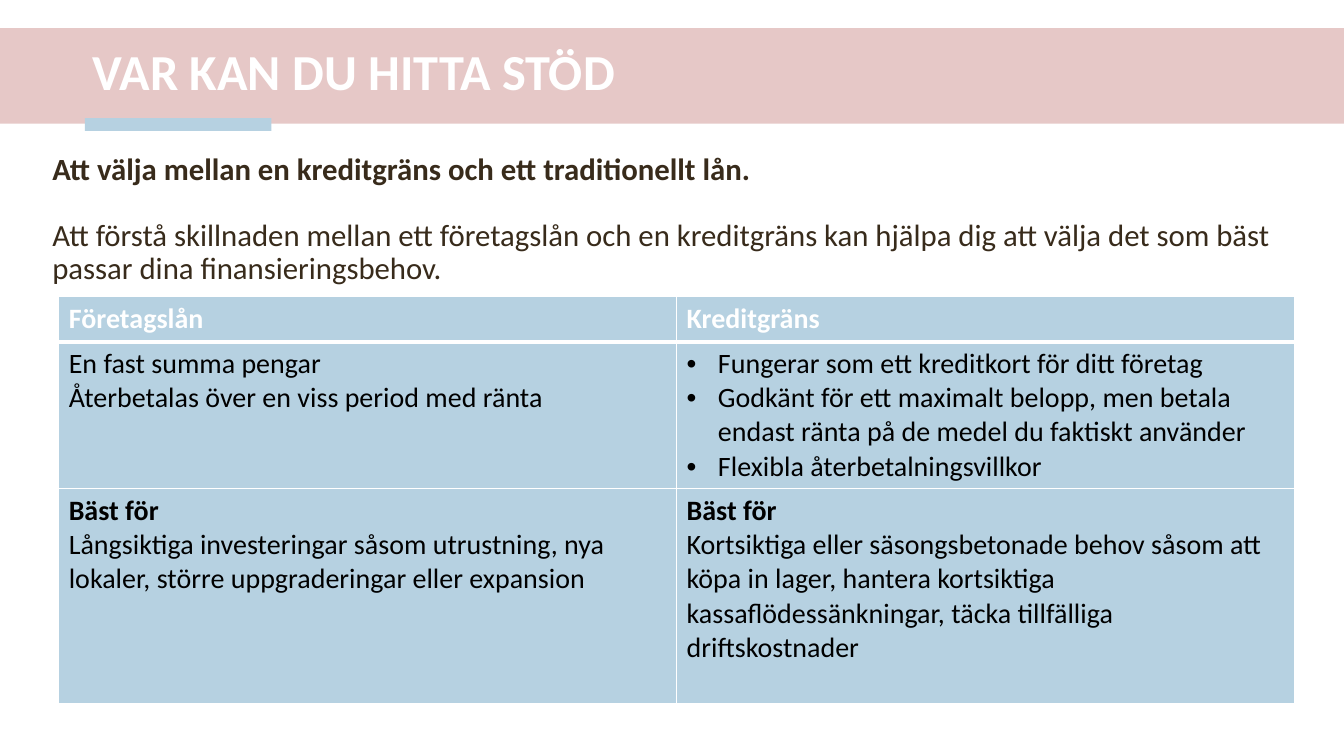
from lxml import etree
from pptx import Presentation, util as u
from pptx.dml.color import RGBColor
from pptx.enum import shapes, text
from pptx.oxml import ns

PINK, BLUE, WHITE, BROWN, BLACK = "E6C8C7", "B6D1E1", "FFFFFF", "382B1B", "000000"


def colour(value):
    return RGBColor.from_string(value)


def add_xml(parent, tag, **attributes):
    return etree.SubElement(parent, ns.qn(tag), attributes)


class SlideBuilder:
    font_name = "Calibri"

    def __init__(self, slide):
        self.slide = slide

    def style(self, paragraph, size, hue, bold=False):
        font = paragraph.font
        font.name, font.size, font.bold = self.font_name, u.Pt(size), bold
        font.color.rgb = colour(hue)

    def title(self, wording, left, top, width, height):
        heading = self.slide.shapes.title
        heading.left, heading.top = u.Cm(left), u.Cm(top)
        heading.width, heading.height = u.Cm(width), u.Cm(height)
        frame = heading.text_frame
        frame.text = wording
        frame.word_wrap = True
        frame.auto_size = text.MSO_AUTO_SIZE.NONE
        frame.vertical_anchor = text.MSO_ANCHOR.MIDDLE
        line = frame.paragraphs[0]
        line.alignment = text.PP_ALIGN.LEFT
        line.line_spacing = 0.9
        self.style(line, 36, WHITE, True)

    def bar(self, hue, left, top, width, height):
        bar = self.slide.shapes.add_shape(
            shapes.MSO_SHAPE.RECTANGLE, u.Cm(left), u.Cm(top), u.Cm(width), u.Cm(height))
        bar.shadow.inherit = False
        bar.fill.solid()
        bar.fill.fore_color.rgb = colour(hue)
        bar.line.fill.background()
        self.slide.shapes.title.element.addprevious(bar.element)

    def intro(self, lead, explanation, left, top, width, height):
        box = self.slide.shapes.add_textbox(u.Cm(left), u.Cm(top), u.Cm(width), u.Cm(height))
        frame = box.text_frame
        frame.word_wrap = True
        frame.text = f"{lead}\n{explanation}"
        for line, bold in zip(frame.paragraphs, (True, False)):
            line.line_spacing = u.Pt(23.4)
            self.style(line, 22, BROWN, bold)
        frame.paragraphs[1].space_before = u.Pt(23.4)

    def bullet(self, paragraph):
        properties = paragraph._p.get_or_add_pPr()
        indent = u.Cm(0.79)
        properties.set("marL", str(indent))
        properties.set("indent", str(-indent))
        add_xml(properties, "a:buFont", typeface="Arial")
        add_xml(properties, "a:buChar", char="•")

    def borders(self, cell, **widths):
        properties = cell._tc.get_or_add_tcPr()
        for position, side in enumerate("LRTB"):
            edge = add_xml(properties, f"a:ln{side}", w=str(u.Pt(widths.get(side, 1))))
            add_xml(add_xml(edge, "a:solidFill"), "a:srgbClr", val=WHITE)
            properties.insert(position, edge)

    def cell(self, cell, lines, row):
        cell.fill.solid()
        cell.fill.fore_color.rgb = colour(BLUE)
        self.borders(cell, **{0: {"B": 3}, 1: {"T": 3}}.get(row, {}))
        cell.text = "\n".join(line.removeprefix("• ") for line in lines)
        for line, paragraph in zip(lines, cell.text_frame.paragraphs):
            if line.startswith("• "):
                self.bullet(paragraph)
            bold = row == 0 or line == "Bäst för"
            self.style(paragraph, 20, BLACK if row else WHITE, bold)

    def table(self, rows, heights, left, top, width):
        table = self.slide.shapes.add_table(
            len(rows), len(rows[0]), u.Cm(left), u.Cm(top), u.Cm(width), u.Cm(sum(heights))).table
        for row, (contents, height) in enumerate(zip(rows, heights)):
            table.rows[row].height = u.Cm(height)
            for column, lines in enumerate(contents):
                self.cell(table.cell(row, column), lines, row)


COMPARISON = [
    [["Företagslån"], ["Kreditgräns"]],
    [
        ["En fast summa pengar", "Återbetalas över en viss period med ränta"],
        [
            "• Fungerar som ett kreditkort för ditt företag",
            "• Godkänt för ett maximalt belopp, men betala endast ränta på de medel du faktiskt använder",
            "• Flexibla återbetalningsvillkor",
        ],
    ],
    [
        ["Bäst för",
         "Långsiktiga investeringar såsom utrustning, nya lokaler, större uppgraderingar eller expansion"],
        ["Bäst för",
         "Kortsiktiga eller säsongsbetonade behov såsom att köpa in lager, hantera kortsiktiga "
         "kassaflödessänkningar, täcka tillfälliga driftskostnader"],
    ],
]


def main():
    deck = Presentation()
    deck.slide_width, deck.slide_height = u.Cm(33.87), u.Cm(19.05)
    page = SlideBuilder(deck.slides.add_slide(deck.slide_layouts[5]))
    page.bar(PINK, 0, 0.71, 33.87, 2.41)
    page.bar(BLUE, 2.14, 2.98, 4.7, 0.32)
    page.title("VAR KAN DU HITTA STÖD", 2.08, 0.86, 30.3, 2)
    page.intro(
        "Att välja mellan en kreditgräns och ett traditionellt lån.",
        "Att förstå skillnaden mellan ett företagslån och en kreditgräns kan hjälpa dig "
        "att välja det som bäst passar dina finansieringsbehov.",
        1.07, 3.76, 31.85, 7.06)
    page.table(COMPARISON, [1.13, 3.7, 5.41], 1.48, 7.48, 31.14)
    deck.save("out.pptx")


if __name__ == "__main__":
    main()
